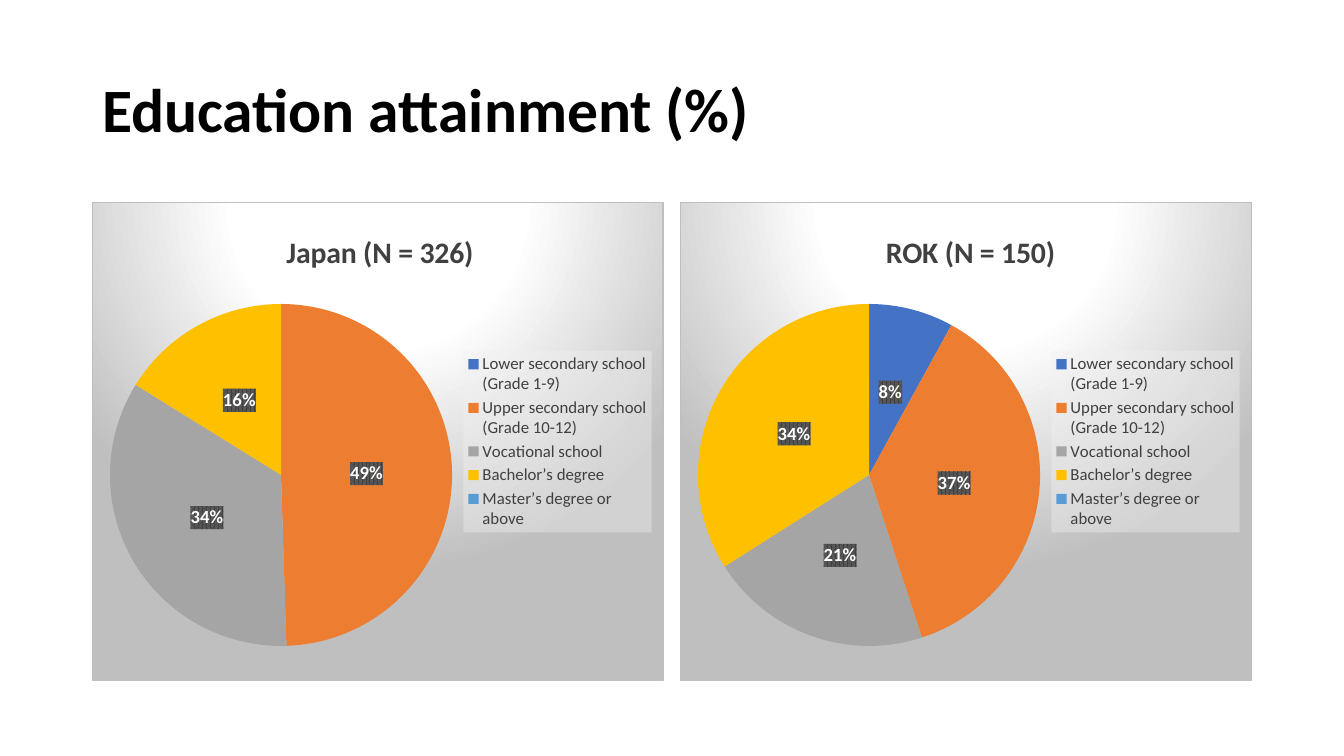
from dataclasses import dataclass
from typing import Optional

from lxml.etree import SubElement
from pptx import Presentation
from pptx.chart.data import CategoryChartData
from pptx.dml.color import RGBColor
from pptx.enum.chart import XL_CHART_TYPE as ChartType
from pptx.enum.chart import XL_LABEL_POSITION as LabelPosition
from pptx.enum.chart import XL_LEGEND_POSITION as LegendPosition
from pptx.enum.text import MSO_ANCHOR as Anchor
from pptx.oxml import parse_xml
from pptx.oxml.ns import nsdecls, qn
from pptx.util import Emu, Pt

PX = 9525
FONT = "Calibri"
LEVELS = (
    "Lower secondary school (Grade 1-9)",
    "Upper secondary school (Grade 10-12)",
    "Vocational school",
    "Bachelor’s degree",
    "Master’s degree or above",
)
LEVEL_COLORS = ("4472C4", "ED7D31", "A5A5A5", "FFC000", "5B9BD5")

PANEL_LEFT, PANEL_TOP, PANEL_WIDTH, PANEL_HEIGHT, PANEL_GAP = 88, 192, 544, 457, 16

PANEL_STYLE = """
<a:gradFill><a:gsLst>
  <a:gs pos="0"><a:srgbClr val="FFFFFF"/></a:gs>
  <a:gs pos="39000"><a:srgbClr val="FFFFFF"/></a:gs>
  <a:gs pos="100000"><a:srgbClr val="BFBFBF"/></a:gs>
</a:gsLst><a:path path="circle">
  <a:fillToRect l="50000" t="-80000" r="50000" b="180000"/>
</a:path></a:gradFill>
<a:ln w="9525"><a:solidFill><a:srgbClr val="BFBFBF"/></a:solidFill></a:ln>"""
LEGEND_STYLE = """
<a:solidFill><a:srgbClr val="F2F2F2"><a:alpha val="39000"/></a:srgbClr></a:solidFill>
<a:ln><a:noFill/></a:ln>"""
LABEL_STYLE = """
<a:pattFill prst="pct75">
  <a:fgClr><a:srgbClr val="404040"/></a:fgClr>
  <a:bgClr><a:srgbClr val="595959"/></a:bgClr>
</a:pattFill><a:ln><a:noFill/></a:ln>"""


@dataclass(frozen=True)
class Country:
    heading: str
    heading_x: float
    shares: tuple[Optional[int], ...]


COUNTRIES = (
    Country("Japan (N = 326)", 0.33, (0, 49, 34, 16, 0)),
    Country("ROK (N = 150)", 0.35, (8, 37, 21, 34, None)),
)


def px(length: int) -> Emu:
    return Emu(length * PX)


def color(value: str) -> RGBColor:
    return RGBColor.from_string(value)


def set_all(target, **values) -> None:
    for name, value in values.items():
        setattr(target, name, value)


def set_font(font, size: float, ink: str, bold: bool = False) -> None:
    set_all(font, name=FONT, size=Pt(size), bold=bold)
    font.color.rgb = color(ink)


def style_xml(content: str):
    return parse_xml(f"<c:spPr {nsdecls('c', 'a')}>{content}</c:spPr>")


def set_layout(part, index: int, inner: bool = False, **fractions: float) -> None:
    for old in part.findall(qn("c:layout")):
        part.remove(old)
    layout = parse_xml(f"<c:layout {nsdecls('c')}><c:manualLayout/></c:layout>")
    manual = layout[0]
    if inner:
        SubElement(manual, qn("c:layoutTarget")).set("val", "inner")
    for axis in ("x", "y"):
        SubElement(manual, qn(f"c:{axis}Mode")).set("val", "edge")
    for name, value in fractions.items():
        SubElement(manual, qn(f"c:{name}")).set("val", str(value))
    part.insert(index, layout)


def add_heading(slide) -> None:
    heading = slide.shapes.add_textbox(px(88), px(38), px(1104), px(139))
    frame = heading.text_frame
    set_all(frame, word_wrap=True, vertical_anchor=Anchor.MIDDLE)
    line = frame.paragraphs[0]
    line.line_spacing = 0.9
    words = line.add_run()
    words.text = "Education attainment (%)"
    set_font(words.font, 44, "000000", True)


def add_country(slide, country: Country, left: int) -> None:
    data = CategoryChartData()
    data.categories = LEVELS
    data.add_series("Series 1", country.shares)
    chart = slide.shapes.add_chart(
        ChartType.PIE, px(left), px(PANEL_TOP), px(PANEL_WIDTH), px(PANEL_HEIGHT), data
    ).chart
    set_font(chart.font, 10, "000000")
    set_all(chart, has_title=True, has_legend=True)
    chart_space = chart.element
    chart_body = chart_space.find(qn("c:chart"))
    chart_body.addnext(style_xml(PANEL_STYLE))

    caption = chart.chart_title.text_frame.paragraphs[0].add_run()
    caption.text = country.heading
    set_font(caption.font, 21.3, "404040", True)
    set_layout(chart_body.find(qn("c:title")), 1, x=country.heading_x, y=0.05)

    legend = chart.legend
    set_all(legend, position=LegendPosition.RIGHT, include_in_layout=False)
    set_font(legend.font, 12, "404040")
    legend_part = chart_body.find(qn("c:legend"))
    legend_part.find(qn("c:txPr")).addprevious(style_xml(LEGEND_STYLE))
    set_layout(legend_part, 1, x=0.65, y=0.31, w=0.33, h=0.38)
    set_layout(chart_body.find(qn("c:plotArea")), 0, True, x=0.03, y=0.21, w=0.6, h=0.72)

    pie = chart.plots[0]
    pie.vary_by_categories = True
    shares = pie.series[0]
    for index, level_color in enumerate(LEVEL_COLORS):
        wedge = shares.points[index].format
        wedge.fill.solid()
        wedge.fill.fore_color.rgb = color(level_color)
        wedge.line.fill.background()
    labels = shares.data_labels
    set_all(
        labels,
        show_percentage=True,
        show_value=False,
        number_format="0%",
        number_format_is_linked=False,
        position=LabelPosition.CENTER,
    )
    set_font(labels.font, 13.3, "FFFFFF", True)
    label_part = chart_body.find(f".//{qn('c:dLbls')}")
    label_part.find(qn("c:txPr")).addprevious(style_xml(LABEL_STYLE))


def main() -> None:
    deck = Presentation()
    set_all(deck, slide_width=px(1280), slide_height=px(720))
    slide = deck.slides.add_slide(deck.slide_layouts[6])
    add_heading(slide)
    for column, country in enumerate(COUNTRIES):
        add_country(slide, country, PANEL_LEFT + column * (PANEL_WIDTH + PANEL_GAP))
    deck.save("out.pptx")


if __name__ == "__main__":
    main()
